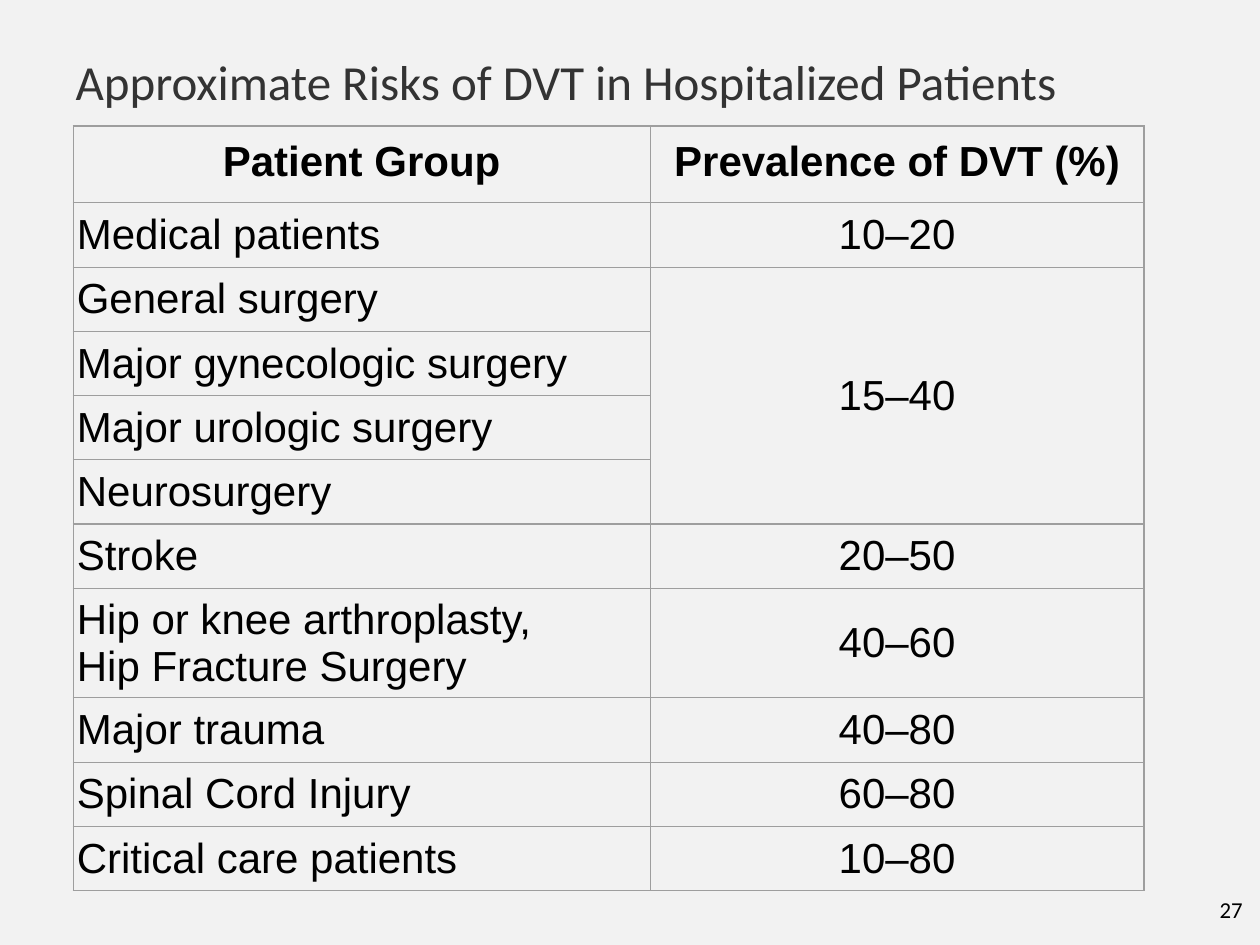
from lxml.etree import SubElement
from pptx import Presentation
from pptx.dml.color import RGBColor
from pptx.enum.text import MSO_ANCHOR as Anchor, PP_ALIGN as Align
from pptx.oxml.ns import qn
from pptx.util import Inches, Pt

COLORS = {"background": "F2F2F2", "title": "333333", "text": "000000", "border": "9E9E9E"}

HEADERS = ("Patient Group", "Prevalence of DVT (%)")
RISKS = [
    (["Medical patients"], "10–20"),
    (["General surgery", "Major gynecologic surgery", "Major urologic surgery", "Neurosurgery"], "15–40"),
    (["Stroke"], "20–50"),
    (["Hip or knee arthroplasty,\nHip Fracture Surgery"], "40–60"),
    (["Major trauma"], "40–80"),
    (["Spinal Cord Injury"], "60–80"),
    (["Critical care patients"], "10–80"),
]
COLUMN_WIDTHS = (4.58, 3.92)
HEADER_HEIGHT, ROW_HEIGHT, TWO_LINE_HEIGHT = 0.61, 0.51, 0.87


def write(frame, text, size, font, color, align=Align.LEFT, bold=False):
    frame.text = text
    frame.word_wrap = True
    for paragraph in frame.paragraphs:
        paragraph.alignment = align
        for run in paragraph.runs:
            run.font.size = Pt(size)
            run.font.name = font
            run.font.bold = bold
            run.font.color.rgb = RGBColor.from_string(COLORS[color])


def set_margins(area, inset):
    area.margin_left = area.margin_right = Inches(inset)
    area.margin_top = area.margin_bottom = Inches(inset)


def add_title(slide, text):
    title = slide.shapes.title
    title.left, title.top = Inches(0.5), Inches(0.33)
    title.width, title.height = Inches(9), Inches(0.65)
    write(title.text_frame, text, 28, "Calibri", "title")
    set_margins(title.text_frame, 0.1)
    title.text_frame.vertical_anchor = Anchor.BOTTOM


def add_page_number(slide, number):
    box = slide.shapes.add_textbox(Inches(9.36), Inches(6.93), Inches(0.6), Inches(0.57))
    write(box.text_frame, number, 13, "Calibri", "text", Align.RIGHT)
    set_margins(box.text_frame, 0.1)
    box.text_frame.vertical_anchor = Anchor.MIDDLE


def style_cell(cell):
    properties = cell._tc.get_or_add_tcPr()
    for side in ("a:lnL", "a:lnR", "a:lnT", "a:lnB"):
        border = SubElement(properties, qn(side), w=str(Pt(0.75)))
        fill = SubElement(border, qn("a:solidFill"))
        SubElement(fill, qn("a:srgbClr"), val=COLORS["border"])
    cell.fill.background()
    set_margins(cell, 0.03)
    cell.vertical_anchor = Anchor.MIDDLE


def fill_cell(cell, text, align=Align.LEFT, bold=False):
    write(cell.text_frame, text, 24, "Arial", "text", align, bold)


def add_risk_table(slide):
    groups = [group for names, _ in RISKS for group in names]
    heights = [HEADER_HEIGHT] + [TWO_LINE_HEIGHT if "\n" in group else ROW_HEIGHT for group in groups]
    table = slide.shapes.add_table(
        len(heights), len(HEADERS), Inches(0.58), Inches(1),
        Inches(sum(COLUMN_WIDTHS)), Inches(sum(heights)),
    ).table
    table.first_row = table.horz_banding = False
    for column, width in zip(table.columns, COLUMN_WIDTHS):
        column.width = Inches(width)
    for row, height in zip(table.rows, heights):
        row.height = Inches(height)
    for cell in table.iter_cells():
        style_cell(cell)

    for column, header in enumerate(HEADERS):
        cell = table.cell(0, column)
        fill_cell(cell, header, Align.CENTER, True)
        set_margins(cell, 0.1)
        cell.vertical_anchor = Anchor.TOP

    first = 1
    for names, prevalence in RISKS:
        last = first + len(names) - 1
        for row, group in enumerate(names, first):
            fill_cell(table.cell(row, 0), group)
        if last > first:
            table.cell(first, 1).merge(table.cell(last, 1))
        fill_cell(table.cell(first, 1), prevalence, Align.CENTER)
        first = last + 1


def main():
    deck = Presentation()
    deck.slide_width, deck.slide_height = Inches(10), Inches(7.5)
    slide = deck.slides.add_slide(deck.slide_layouts[5])
    slide.background.fill.solid()
    slide.background.fill.fore_color.rgb = RGBColor.from_string(COLORS["background"])
    add_page_number(slide, "27")
    add_title(slide, "Approximate Risks of DVT in Hospitalized Patients")
    add_risk_table(slide)
    deck.save("out.pptx")


if __name__ == "__main__":
    main()
